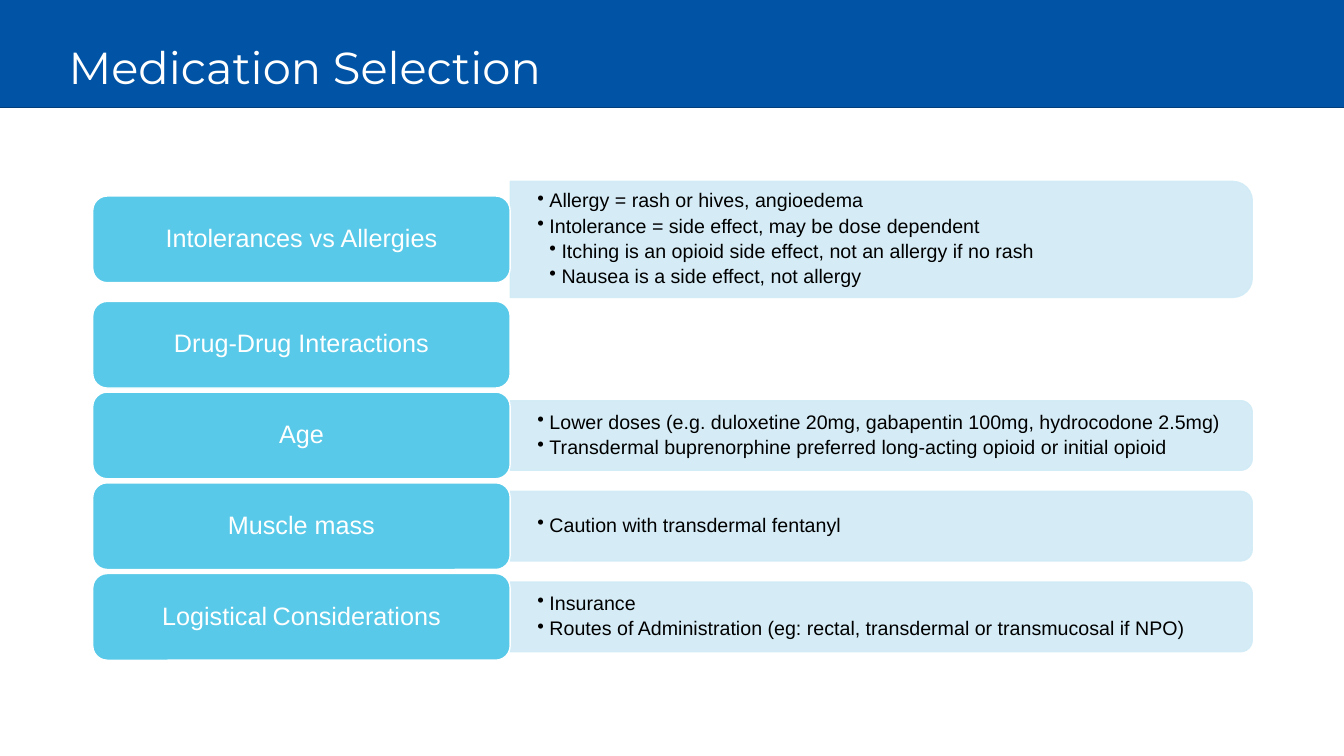
from dataclasses import dataclass

from lxml import etree
from pptx import Presentation
from pptx import util as u
from pptx.dml.color import RGBColor
from pptx.enum import shapes, text
from pptx.oxml.ns import qn

# Content: label runs as (text, size name); points as (indent level, text)
TITLE = "Medication Selection"
TOPICS = [
    ([("Intolerances vs Allergies", "label")], [
        (1, "Allergy = rash or hives, angioedema"),
        (1, "Intolerance = side effect, may be dose dependent"),
        (2, "Itching is an opioid side effect, not an allergy if no rash"),
        (2, "Nausea is a side effect, not allergy")]),
    ([("Drug-Drug Interactions", "label")], []),
    ([("Age", "label")], [
        (1, "Lower doses (e.g. duloxetine 20mg, gabapentin 100mg, hydrocodone 2.5mg)"),
        (1, "Transdermal buprenorphine preferred long-acting opioid or initial opioid")]),
    ([("Muscle mass", "label")], [(1, "Caution with transdermal fentanyl")]),
    ([("Logistical", "label"), (" ", "point"), ("Considerations", "label")], [
        (1, "Insurance"),
        (1, "Routes of Administration (eg: rectal, transdermal or transmucosal if NPO)")]),
]


@dataclass(frozen=True)
class Theme:
    banner: str = "0154A5"
    banner_edge: str = "013E7A"
    label: str = "58C9E8"
    panel: str = "D1EBF6"
    light: str = "FFFFFF"
    dark: str = "000000"
    title_font: str = "Montserrat"
    body_font: str = "Arial"
    title_size: int = 32
    label_size: int = 18
    point_size: int = 14


THEME = Theme()
SIZES = {"label": THEME.label_size, "point": THEME.point_size}

# Grid, in inches
TOP, GAP = 1.8, 0.04
LABEL_LEFT, LABEL_WIDTH, LABEL_HEIGHT = 0.92, 4.14, 0.86
PANEL_LEFT, PANEL_WIDTH = LABEL_LEFT + LABEL_WIDTH, 7.36
PANEL_HEIGHT, TALL_PANEL_HEIGHT = 0.69, 1.15
BULLET_STEP = 0.12


def add_block(page, kind, area, fill, line, alpha=None):
    block = page.shapes.add_shape(kind, *map(u.Inches, area))
    block.shadow.inherit = False
    block.fill.solid()
    block.fill.fore_color.rgb = RGBColor.from_string(fill)
    block.line.color.rgb = RGBColor.from_string(line)
    block.line.width = u.Pt(1)
    if alpha:
        for color in block._element.spPr.iter(qn("a:srgbClr")):
            etree.SubElement(color, qn("a:alpha"), val=str(alpha * 1000))
    return block


def set_frame(box, across, down):
    frame = box.text_frame
    frame.word_wrap = True
    frame.vertical_anchor = text.MSO_ANCHOR.MIDDLE
    frame.margin_left = frame.margin_right = u.Inches(across)
    frame.margin_top = frame.margin_bottom = u.Inches(down)
    return frame


def add_span(para, words, size, color, font=THEME.body_font):
    span = para.add_run()
    span.text = words
    span.font.name = font
    span.font.size = u.Pt(size)
    span.font.color.rgb = RGBColor.from_string(color)


def add_label(page, top, runs):
    box = add_block(page, shapes.MSO_SHAPE.ROUNDED_RECTANGLE,
                    (LABEL_LEFT, top, LABEL_WIDTH, LABEL_HEIGHT), THEME.label, THEME.light)
    para = set_frame(box, 0.07, 0.04).paragraphs[0]
    para.alignment = text.PP_ALIGN.CENTER
    para.line_spacing = 0.9
    for words, size in runs:
        add_span(para, words, SIZES[size], THEME.light)


def add_panel(page, middle, height, points):
    # A quarter turn puts the two rounded corners on the right
    center = PANEL_LEFT + PANEL_WIDTH / 2
    panel = add_block(page, shapes.MSO_SHAPE.ROUND_2_SAME_RECTANGLE,
                      (center - height / 2, middle - PANEL_WIDTH / 2, height, PANEL_WIDTH),
                      THEME.panel, THEME.panel, alpha=90)
    panel.rotation = 90

    box = page.shapes.add_textbox(*map(u.Inches, (
        PANEL_LEFT, middle - height / 2, PANEL_WIDTH, height)))
    frame = set_frame(box, 0.27, 0.14)
    for index, (level, words) in enumerate(points):
        para = frame.add_paragraph() if index else frame.paragraphs[0]
        props = para._p.get_or_add_pPr()
        props.set("marL", str(u.Inches(BULLET_STEP * level)))
        props.set("indent", str(-u.Inches(BULLET_STEP)))
        etree.SubElement(props, qn("a:buChar"), char="•")
        para.level = level
        para.line_spacing = 0.9
        para.space_after = u.Pt(2.9)
        add_span(para, words, THEME.point_size, THEME.dark)


def main():
    deck = Presentation()
    deck.slide_width, deck.slide_height = u.Inches(13.33), u.Inches(7.5)
    page = deck.slides.add_slide(deck.slide_layouts[5])

    # Banner, with the title in front of it
    add_block(page, shapes.MSO_SHAPE.RECTANGLE, (-0.31, -0.24, 13.89, 1.31),
              THEME.banner, THEME.banner_edge)
    title = page.shapes.title
    page.shapes._spTree.append(title._element)
    title.left, title.top, title.width, title.height = map(u.Inches, (0.58, 0.34, 11.5, 0.7))
    para = set_frame(title, 0.1, 0.05).paragraphs[0]
    para.alignment = text.PP_ALIGN.LEFT
    para.line_spacing = 0.9
    add_span(para, TITLE, THEME.title_size, THEME.light, THEME.title_font)

    # Rows: each is as tall as the larger of its label and its panel
    top = TOP
    for runs, points in TOPICS:
        panel_height = TALL_PANEL_HEIGHT if len(points) > 2 else PANEL_HEIGHT
        row_height = max(LABEL_HEIGHT, panel_height)
        middle = top + row_height / 2
        if points:
            add_panel(page, middle, panel_height, points)
        add_label(page, middle - LABEL_HEIGHT / 2, runs)
        top += row_height + GAP

    deck.save("out.pptx")


if __name__ == "__main__":
    main()
